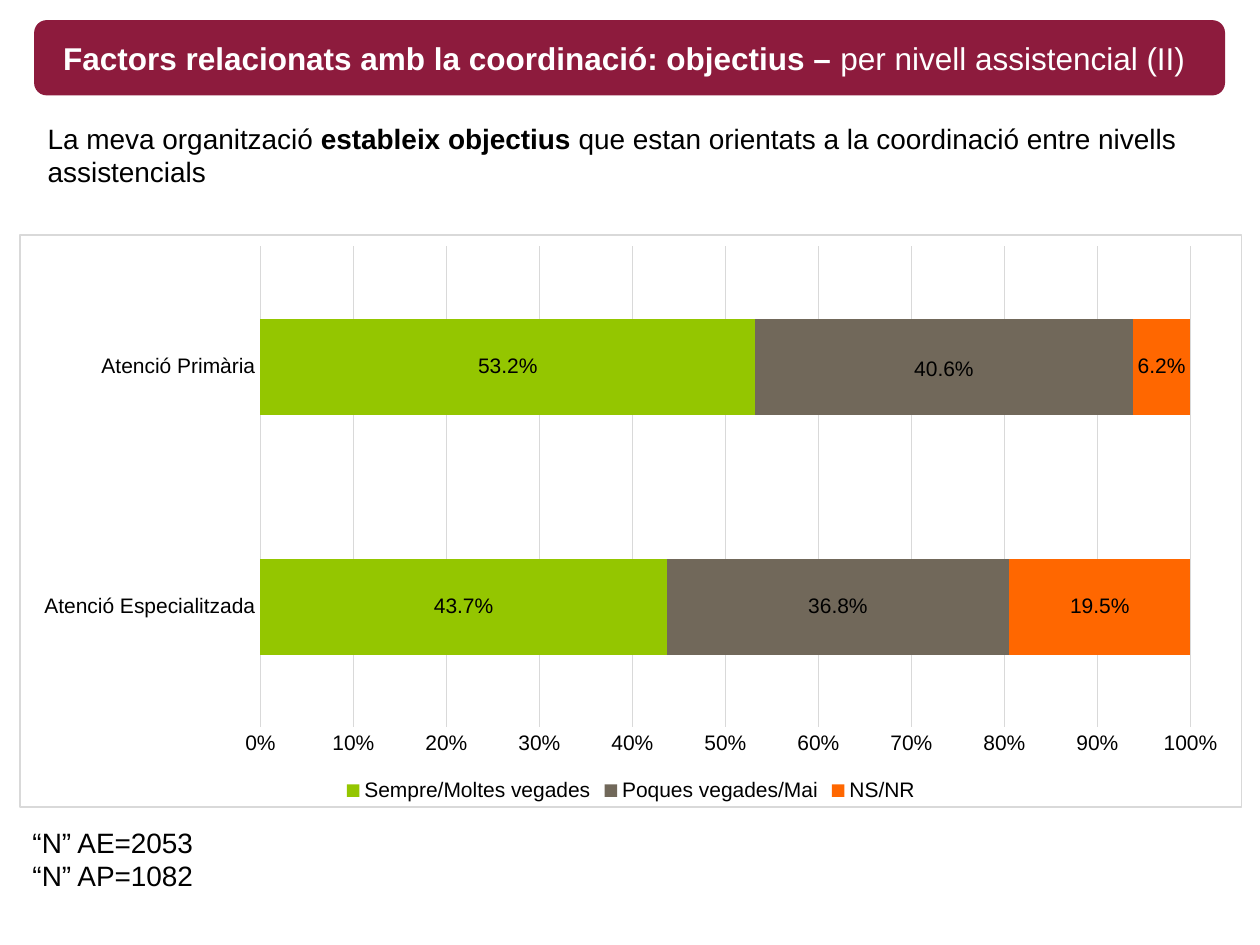
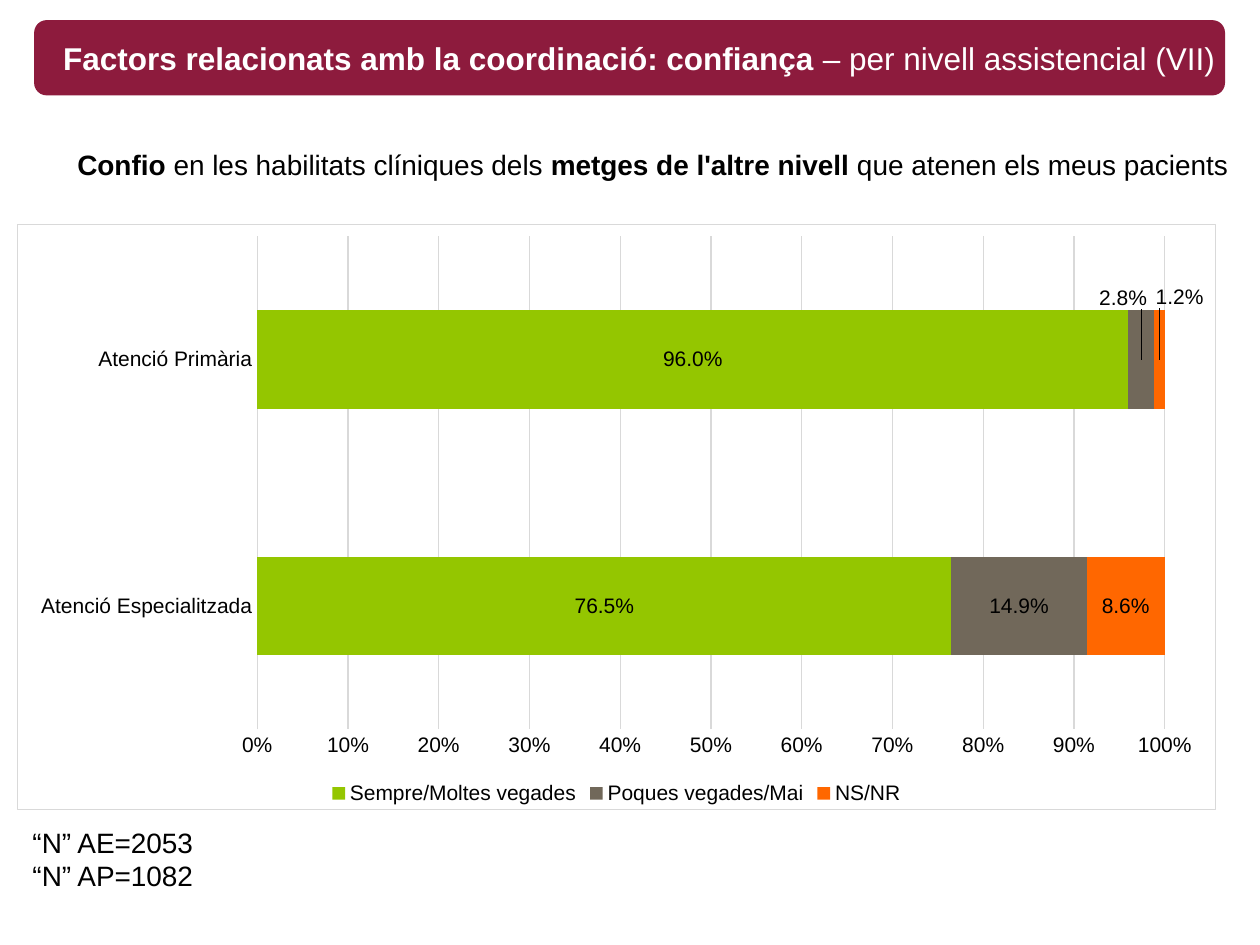
from lxml import etree
from pptx import Presentation
from pptx.chart.data import CategoryChartData
from pptx.dml.color import RGBColor
from pptx.enum.chart import (XL_CHART_TYPE as CHART, XL_LABEL_POSITION as LABEL,
                             XL_LEGEND_POSITION as LEGEND, XL_TICK_MARK as TICK)
from pptx.enum.shapes import MSO_SHAPE as SHAPE
from pptx.enum.text import MSO_ANCHOR as ANCHOR, MSO_AUTO_SIZE as AUTO_SIZE, PP_ALIGN as ALIGN
from pptx.oxml import parse_xml
from pptx.oxml.ns import nsdecls, qn
from pptx.util import Pt

FONT = "Arial"
BLACK = RGBColor(0x00, 0x00, 0x00)
WHITE = RGBColor(0xFF, 0xFF, 0xFF)
MAROON = RGBColor(0x8D, 0x1B, 0x3D)
GRID = RGBColor(0xD9, 0xD9, 0xD9)
ANSWERS = {
    "Sempre/Moltes vegades": RGBColor(0x94, 0xC6, 0x00),
    "Poques vegades/Mai": RGBColor(0x71, 0x68, 0x5A),
    "NS/NR": RGBColor(0xFF, 0x67, 0x00),
}
LEVELS = ["Atenció Especialitzada", "Atenció Primària"]
SAMPLE_SIZES = [[("“N” AE=2053", False)], [("“N” AP=1082", False)]]
LABEL_FORMAT = "0.0%"


def place(sp, left, top, width, height):
    sp.left, sp.top, sp.width, sp.height = Pt(left), Pt(top), Pt(width), Pt(height)


def write(sp, paragraphs, size=16, color=BLACK, anchor=ANCHOR.TOP):
    """Fill a shape with paragraphs, each a list of (text, bold) runs."""
    tf = sp.text_frame
    tf.word_wrap = True
    tf.auto_size = AUTO_SIZE.NONE
    tf.vertical_anchor = anchor
    for i, runs in enumerate(paragraphs):
        p = tf.paragraphs[0] if i == 0 else tf.add_paragraph()
        p.alignment = ALIGN.LEFT
        for text, bold in runs:
            r = p.add_run()
            r.text = text
            r.font.name, r.font.size, r.font.bold = FONT, Pt(size), bold
            r.font.color.rgb = color


def add_text(slide, box, paragraphs, **fmt):
    sp = slide.shapes.add_textbox(*map(Pt, box))
    write(sp, paragraphs, **fmt)


def add_band(slide, heading):
    band = slide.shapes.add_shape(SHAPE.ROUNDED_RECTANGLE, Pt(19.5), Pt(11.5), Pt(680.5), Pt(43))
    band.shadow.inherit = False
    band.fill.solid()
    band.fill.fore_color.rgb = MAROON
    band.line.fill.background()
    add_text(slide, (29, 16, 680.5, 34), [heading], size=18, color=WHITE, anchor=ANCHOR.MIDDLE)


def frame_chart(chart):
    """Give the chart area a white fill and a thin grey border."""
    sp_pr = parse_xml(
        f'<c:spPr {nsdecls("c", "a")}>'
        f'<a:solidFill><a:srgbClr val="{WHITE}"/></a:solidFill>'
        f'<a:ln w="9525"><a:solidFill><a:srgbClr val="{GRID}"/></a:solidFill></a:ln></c:spPr>')
    chart._chartSpace.find(qn("c:chart")).addnext(sp_pr)


def shift_label(series, point, dx, dy):
    """Move one value label by fractions of the chart's width and height."""
    label = series.points[point].data_label
    label.position = LABEL.CENTER
    label.font.size = Pt(12)
    label.font.name = FONT
    label.font.color.rgb = BLACK
    idx = series._element.find(f'{qn("c:dLbls")}/{qn("c:dLbl")}/{qn("c:idx")}[@val="{point}"]')
    layout = etree.Element(qn("c:layout"))
    manual = etree.SubElement(layout, qn("c:manualLayout"))
    for axis, offset in (("x", dx), ("y", dy)):
        etree.SubElement(manual, qn(f"c:{axis}"), val=str(offset))
    idx.addnext(layout)
    num_fmt = etree.Element(qn("c:numFmt"), formatCode=LABEL_FORMAT, sourceLinked="0")
    layout.addnext(num_fmt)


def format_axes(chart):
    for axis in (chart.category_axis, chart.value_axis):
        axis.major_tick_mark = axis.minor_tick_mark = TICK.NONE
    cat_line = chart.category_axis.format.line
    cat_line.color.rgb, cat_line.width = GRID, Pt(0.75)
    val = chart.value_axis
    val.format.line.fill.background()
    val.minimum_scale, val.maximum_scale, val.major_unit = 0, 1, 0.1
    val.tick_labels.number_format = "0%"
    val.tick_labels.number_format_is_linked = False
    grid_line = val.major_gridlines.format.line
    grid_line.color.rgb, grid_line.width = GRID, Pt(0.75)


def add_answers_chart(slide, box, values, shifts):
    data = CategoryChartData(number_format=LABEL_FORMAT)
    data.categories = LEVELS
    for name, vals in zip(ANSWERS, values):
        data.add_series(name, vals)
    chart = slide.shapes.add_chart(CHART.BAR_STACKED_100, *map(Pt, box), data).chart
    chart.font.name, chart.font.size = FONT, Pt(12)
    chart.font.color.rgb = BLACK
    chart.has_title = False
    chart.has_legend = True
    chart.legend.position = LEGEND.BOTTOM
    chart.legend.include_in_layout = False
    format_axes(chart)
    frame_chart(chart)
    plot = chart.plots[0]
    plot.gap_width, plot.overlap, plot.vary_by_categories = 150, 100, False
    for series, color in zip(plot.series, ANSWERS.values()):
        series.format.fill.solid()
        series.format.fill.fore_color.rgb = color
        labels = series.data_labels
        labels.show_value = True
        labels.position = LABEL.CENTER
        labels.number_format = LABEL_FORMAT
        labels.number_format_is_linked = False
    for series_index, dx, dy in shifts:
        shift_label(plot.series[series_index], LEVELS.index("Atenció Primària"), dx, dy)


def add_survey_slide(prs, heading, question, question_at, chart_box, values, shifts):
    slide = prs.slides.add_slide(prs.slide_layouts[5])
    add_band(slide, heading)
    title = slide.shapes.title
    place(title, *question_at, 680.5, 34)
    write(title, [question], anchor=ANCHOR.MIDDLE)
    add_answers_chart(slide, chart_box, values, shifts)
    add_text(slide, (11.5, 468, 108, 46), SAMPLE_SIZES)


def main():
    prs = Presentation()
    prs.slide_width, prs.slide_height = Pt(720), Pt(540)
    add_survey_slide(
        prs,
        heading=[("Factors relacionats amb la coordinació: objectius – ", True),
                 ("per nivell assistencial (II)", False)],
        question=[("La meva organització ", False), ("estableix objectius ", True),
                  ("que estan orientats a la coordinació entre nivells assistencials", False)],
        question_at=(20, 71.5),
        chart_box=(11, 134, 699, 327.5),
        values=[(0.437, 0.532), (0.368, 0.406), (0.195, 0.062)],
        shifts=[(1, 0, 0.005)])
    add_survey_slide(
        prs,
        heading=[("Factors relacionats amb la coordinació: confiança ", True),
                 ("– per nivell assistencial (VII)", False)],
        question=[("Confio ", True), ("en les habilitats clíniques dels ", False),
                  ("metges de l'altre nivell ", True), ("que atenen els meus pacients", False)],
        question_at=(37, 77),
        chart_box=(9.5, 128, 685.5, 335),
        values=[(0.765, 0.96), (0.149, 0.028), (0.086, 0.012)],
        shifts=[(1, -0.015, -0.104), (2, 0.017, -0.106)])
    prs.save("out.pptx")


if __name__ == "__main__":
    main()
